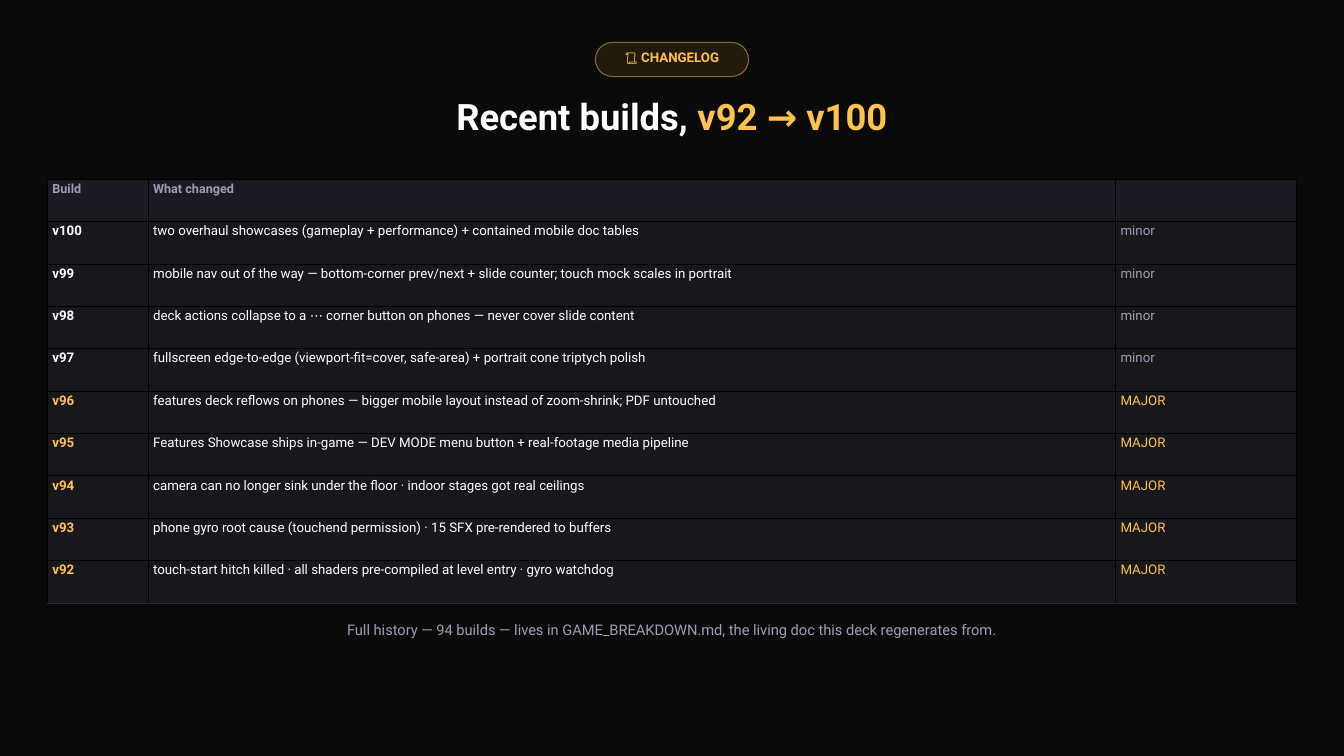
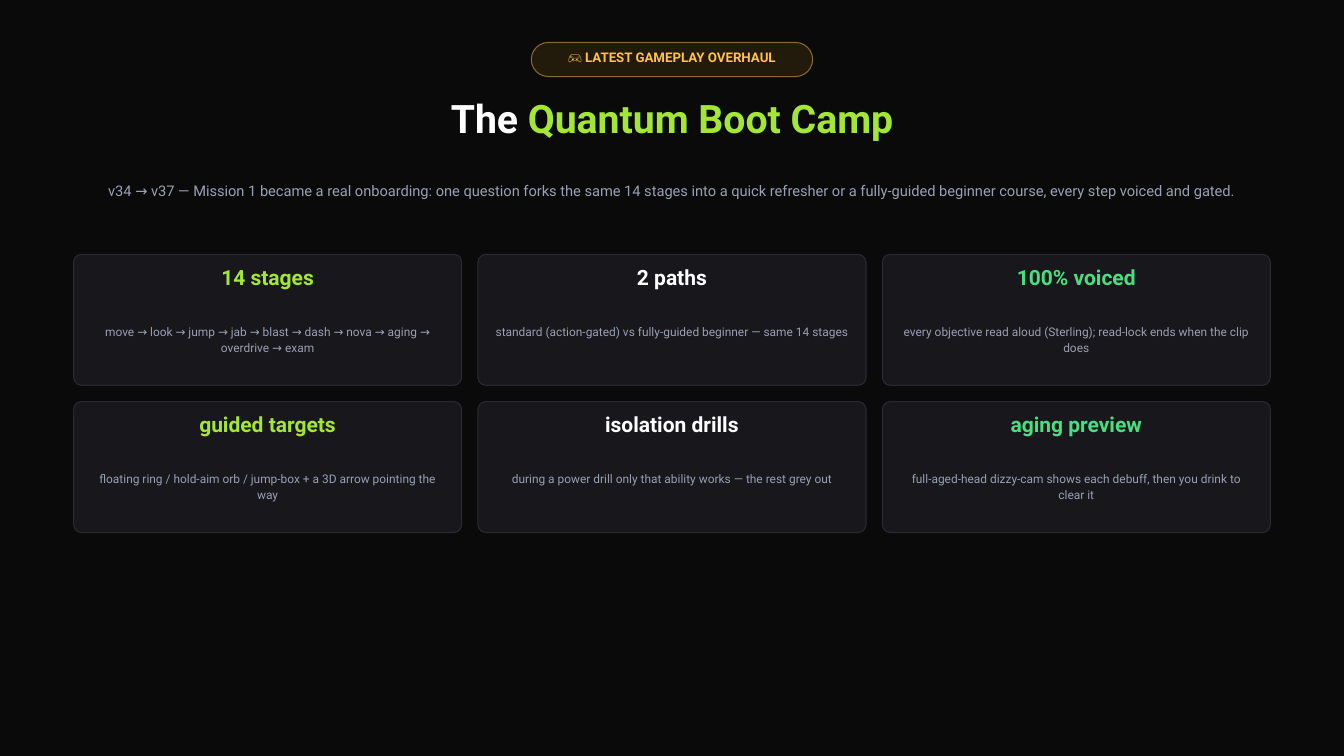
from lxml.etree import SubElement
from pptx import Presentation
from pptx.dml.color import RGBColor
from pptx.enum.shapes import MSO_SHAPE
from pptx.enum.text import MSO_ANCHOR, MSO_AUTO_SIZE, PP_ALIGN
from pptx.oxml.ns import qn
from pptx.util import Cm, Pt

FONT = "Roboto"
BACKGROUND = RGBColor(0x0A, 0x0A, 0x0B)
PANEL = RGBColor(0x17, 0x17, 0x1C)
HEADER = RGBColor(0x1A, 0x1A, 0x22)
EDGE = RGBColor(0x2A, 0x2A, 0x33)
PILL_FILL = RGBColor(0x22, 0x1A, 0x0B)
PILL_EDGE = RGBColor(0x8A, 0x6A, 0x2E)
BLACK = RGBColor(0x00, 0x00, 0x00)
WHITE = RGBColor(0xFF, 0xFF, 0xFF)
GREY = RGBColor(0x9A, 0xA0, 0xB4)
AMBER = RGBColor(0xFF, 0xC2, 0x4B)
LIME = RGBColor(0xA3, 0xE6, 0x35)
GREEN = RGBColor(0x4A, 0xDE, 0x80)

SLIDE_WIDTH = 33.87
NOTE_WIDTH = 28.96

BUILD_COLUMNS = [("Build", 2.54), ("What changed", 24.38), ("", 4.57)]
BUILDS = [
    ("v100", "two overhaul showcases (gameplay + performance) + contained mobile doc tables", "minor"),
    ("v99", "mobile nav out of the way — bottom-corner prev/next + slide counter; "
            "touch mock scales in portrait", "minor"),
    ("v98", "deck actions collapse to a ⋯ corner button on phones — never cover slide content", "minor"),
    ("v97", "fullscreen edge-to-edge (viewport-fit=cover, safe-area) + portrait cone triptych polish", "minor"),
    ("v96", "features deck reflows on phones — bigger mobile layout instead of zoom-shrink; "
            "PDF untouched", "MAJOR"),
    ("v95", "Features Showcase ships in-game — DEV MODE menu button + real-footage media pipeline", "MAJOR"),
    ("v94", "camera can no longer sink under the floor · indoor stages got real ceilings", "MAJOR"),
    ("v93", "phone gyro root cause (touchend permission) · 15 SFX pre-rendered to buffers", "MAJOR"),
    ("v92", "touch-start hitch killed · all shaders pre-compiled at level entry · gyro watchdog", "MAJOR"),
]
HISTORY_NOTE = ("Full history — 94 builds — lives in GAME_BREAKDOWN.md, "
                "the living doc this deck regenerates from.")

BOOT_CAMP_LEAD = ("v34 → v37 — Mission 1 became a real onboarding: one question forks the same 14 stages "
                  "into a quick refresher or a fully-guided beginner course, every step voiced and gated.")
CARD_COLORS = [LIME, WHITE, GREEN]
CARDS = [
    ("14 stages", "move → look → jump → jab → blast → dash → nova → aging → overdrive → exam"),
    ("2 paths", "standard (action-gated) vs fully-guided beginner — same 14 stages"),
    ("100% voiced", "every objective read aloud (Sterling); read-lock ends when the clip does"),
    ("guided targets", "floating ring / hold-aim orb / jump-box + a 3D arrow pointing the way"),
    ("isolation drills", "during a power drill only that ability works — the rest grey out"),
    ("aging preview", "full-aged-head dizzy-cam shows each debuff, then you drink to clear it"),
]


def centred_left(width):
    return (SLIDE_WIDTH - width) / 2


def prepare_frame(frame, side=0, top=0):
    """Top-anchored wrapping text with the given insets in centimetres."""
    frame.word_wrap = True
    frame.auto_size = MSO_AUTO_SIZE.NONE
    frame.vertical_anchor = MSO_ANCHOR.TOP
    frame.margin_left = frame.margin_right = Cm(side)
    frame.margin_top = Cm(top)
    frame.margin_bottom = 0
    return frame


def format_paragraph(paragraph, size, color=None, bold=False, align=PP_ALIGN.CENTER):
    paragraph.alignment = align
    font = paragraph.font
    font.name, font.size, font.bold = FONT, Pt(size), bold
    if color is not None:
        font.color.rgb = color


def add_panel(slide, left, top, width, height, radius, fill, edge):
    panel = slide.shapes.add_shape(MSO_SHAPE.ROUNDED_RECTANGLE, Cm(left), Cm(top), Cm(width), Cm(height))
    panel.adjustments[0] = radius
    panel.shadow.inherit = False
    panel.fill.solid()
    panel.fill.fore_color.rgb = fill
    panel.line.color.rgb = edge
    panel.line.width = Pt(0.75)
    return panel


def add_headed_slide(presentation, label, pill_width, title_parts, title_size):
    """Slide with the label pill and a two-coloured title."""
    slide = presentation.slides.add_slide(presentation.slide_layouts[5])
    pill = add_panel(slide, centred_left(pill_width), 1.07, pill_width, 0.86, 0.5, PILL_FILL, PILL_EDGE)
    paragraph = prepare_frame(pill.text_frame, top=0.05).paragraphs[0]
    paragraph.text = label
    format_paragraph(paragraph, 9.5, AMBER, bold=True)

    title = slide.shapes.title
    title.left, title.top, title.width, title.height = Cm(1.02), Cm(2.38), Cm(31.83), Cm(1.7)
    paragraph = prepare_frame(title.text_frame).paragraphs[0]
    format_paragraph(paragraph, title_size, bold=True)
    for text, color in title_parts:
        run = paragraph.add_run()
        run.text = text
        run.font.color.rgb = color
    return slide


def add_note(slide, text, top, height):
    box = slide.shapes.add_textbox(Cm(centred_left(NOTE_WIDTH)), Cm(top), Cm(NOTE_WIDTH), Cm(height))
    paragraph = prepare_frame(box.text_frame).paragraphs[0]
    paragraph.text = text
    paragraph.line_spacing = 1.15
    format_paragraph(paragraph, 10.5, GREY)


def set_borders(cell, bottom):
    properties = cell._tc.get_or_add_tcPr()
    for side, color in (("L", BLACK), ("R", BLACK), ("T", BLACK), ("B", bottom)):
        line = SubElement(properties, qn(f"a:ln{side}"), w=str(Pt(0.5)))
        fill = SubElement(line, qn("a:solidFill"))
        SubElement(fill, qn("a:srgbClr"), val=str(color))


def format_cell(cell, text, size, color, bold, fill, bottom):
    set_borders(cell, bottom)
    cell.fill.solid()
    cell.fill.fore_color.rgb = fill
    cell.margin_left = cell.margin_right = Cm(0.13)
    cell.margin_top = cell.margin_bottom = Cm(0.05)
    paragraph = cell.text_frame.paragraphs[0]
    paragraph.text = text
    format_paragraph(paragraph, size, color, bold, PP_ALIGN.LEFT)


def add_build_table(slide):
    width = sum(column_width for _, column_width in BUILD_COLUMNS)
    row_count = len(BUILDS) + 1
    table = slide.shapes.add_table(row_count, len(BUILD_COLUMNS), Cm(centred_left(width)), Cm(4.52),
                                   Cm(width), Cm(10.67)).table
    table.horz_banding = False
    for index, (heading, column_width) in enumerate(BUILD_COLUMNS):
        table.columns[index].width = Cm(column_width)
        format_cell(table.cell(0, index), heading, 9, GREY, True, HEADER, BLACK)
    for row, build in enumerate(BUILDS, start=1):
        major = build[2] == "MAJOR"
        colors = (AMBER, WHITE, AMBER) if major else (WHITE, WHITE, GREY)
        bottom = EDGE if row == len(BUILDS) else BLACK
        for column, (text, color) in enumerate(zip(build, colors)):
            format_cell(table.cell(row, column), text, 9.5, color, column == 0, PANEL, bottom)


def add_card_grid(slide):
    columns, width, height, gap = len(CARD_COLORS), 9.78, 3.3, 0.41
    left = centred_left(columns * width + (columns - 1) * gap)
    for index, (heading, body) in enumerate(CARDS):
        row, column = divmod(index, columns)
        card = add_panel(slide, left + column * (width + gap), 6.41 + row * (height + gap),
                         width, height, 0.06, PANEL, EDGE)
        frame = prepare_frame(card.text_frame, side=0.36, top=0.2)
        frame.text = f"{heading}\n{body}"
        heading_paragraph, body_paragraph = frame.paragraphs
        format_paragraph(heading_paragraph, 15, CARD_COLORS[column], bold=True)
        format_paragraph(body_paragraph, 8.5, GREY)
        body_paragraph.line_spacing = 1.1
        body_paragraph.space_before = Pt(24)


def main():
    presentation = Presentation()
    presentation.slide_width, presentation.slide_height = Cm(SLIDE_WIDTH), Cm(19.05)
    background = presentation.slide_master.background.fill
    background.solid()
    background.fore_color.rgb = BACKGROUND

    changelog = add_headed_slide(presentation, "📜 CHANGELOG", 3.86,
                                 [("Recent builds, ", WHITE), ("v92 → v100", AMBER)], 26)
    add_build_table(changelog)
    add_note(changelog, HISTORY_NOTE, 15.57, 0.81)

    boot_camp = add_headed_slide(presentation, "🎮 LATEST GAMEPLAY OVERHAUL", 7.09,
                                 [("The ", WHITE), ("Quantum Boot Camp", LIME)], 28)
    add_note(boot_camp, BOOT_CAMP_LEAD, 4.52, 1.47)
    add_card_grid(boot_camp)

    presentation.save("out.pptx")


if __name__ == "__main__":
    main()
